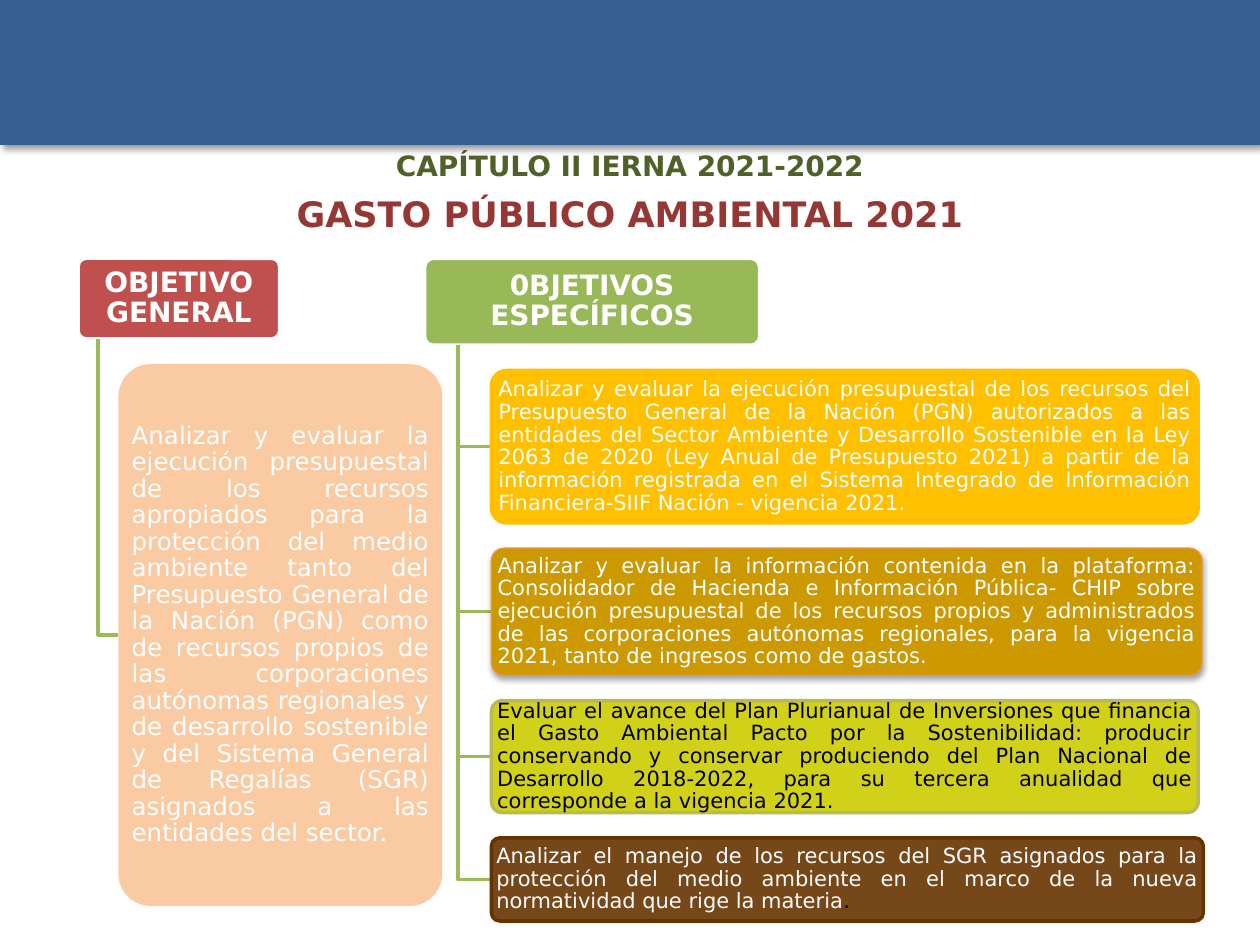
"""Slide with the general and specific objectives of environmental public spending."""
from dataclasses import dataclass
from typing import Optional

from lxml.etree import SubElement
from pptx import Presentation
from pptx.dml.color import RGBColor
from pptx.enum.shapes import MSO_SHAPE as Shape
from pptx.enum.text import MSO_ANCHOR as Anchor, MSO_AUTO_SIZE as AutoSize, PP_ALIGN as Align
from pptx.oxml.ns import qn
from pptx.util import Inches, Pt

FONT = "DejaVu Sans"
WHITE = RGBColor(0xFF, 0xFF, 0xFF)
BLACK = RGBColor(0x00, 0x00, 0x00)
BLUE = RGBColor(0x36, 0x60, 0x92)
RED = RGBColor(0xBF, 0x50, 0x4D)
DARK_RED = RGBColor(0x95, 0x37, 0x34)
DARK_GREEN = RGBColor(0x4F, 0x61, 0x28)
GREEN = RGBColor(0x99, 0xB9, 0x58)
LINK_GREEN = RGBColor(0x9B, 0xBB, 0x59)
ORANGE = RGBColor(0xF7, 0x96, 0x46)
ORANGE_EDGE = RGBColor(0xF5, 0x91, 0x3F)
AMBER = RGBColor(0xFF, 0xC0, 0x00)
OCHRE = RGBColor(0xCC, 0x99, 0x00)
LIME = RGBColor(0xCC, 0xCC, 0x00)
OLIVE = RGBColor(0xBA, 0xBA, 0x55)
BROWN = RGBColor(0x66, 0x33, 0x00)


@dataclass(frozen=True)
class Shadow:
    alpha: int
    blur: float
    dist: float
    angle: int


@dataclass(frozen=True)
class Card:
    text: str
    left: float
    top: float
    width: float
    height: float
    fill: RGBColor
    line: Optional[RGBColor] = WHITE
    weight: float = 2
    opacity: int = 100
    color: RGBColor = WHITE
    size: int = 12
    bold: bool = False
    align: Align = Align.JUSTIFY
    inset: float = 0.02
    shadow: Optional[Shadow] = None
    ending: str = ""


HEADING = dict(size=16, bold=True, align=Align.CENTER, inset=0.03)

GENERAL = Card("OBJETIVO GENERAL", 0.62, 2.05, 1.6, 0.64, RED, **HEADING)
GENERAL_ITEMS = [
    Card("Analizar y evaluar la ejecución presupuestal de los recursos apropiados para la "
         "protección del medio ambiente tanto del Presupuesto General de la Nación (PGN) como de "
         "recursos propios de las corporaciones autónomas regionales y de desarrollo sostenible y "
         "del Sistema General de Regalías (SGR) asignados a las entidades del sector.",
         0.94, 2.89, 2.57, 4.3, ORANGE, line=None, opacity=50, size=14, inset=0.03),
]
SPECIFIC = Card("0BJETIVOS ESPECÍFICOS", 3.37, 2.05, 2.66, 0.69, GREEN, **HEADING)
SPECIFIC_ITEMS = [
    Card("Analizar y evaluar la ejecución presupuestal de los recursos del Presupuesto General de "
         "la Nación (PGN) autorizados a las entidades del Sector Ambiente y Desarrollo Sostenible "
         "en la Ley 2063 de 2020 (Ley Anual de Presupuesto 2021) a partir de la información "
         "registrada en el Sistema Integrado de Información Financiera-SIIF Nación - vigencia 2021.",
         3.9, 2.94, 5.61, 1.21, AMBER, line=AMBER),
    Card("Analizar y evaluar la información contenida en la plataforma: Consolidador de Hacienda e "
         "Información Pública- CHIP sobre ejecución presupuestal de los recursos propios y "
         "administrados de las corporaciones autónomas regionales, para la vigencia 2021, tanto de "
         "ingresos como de gastos.",
         3.9, 4.35, 5.64, 1.01, OCHRE, line=ORANGE_EDGE, weight=0.75,
         shadow=Shadow(35, 3.1, 1.8, 90)),
    Card("Evaluar el avance del Plan Plurianual de Inversiones que financia el Gasto Ambiental "
         "Pacto por la Sostenibilidad: producir conservando y conservar produciendo del Plan "
         "Nacional de Desarrollo 2018-2022, para su tercera anualidad que corresponde a la "
         "vigencia 2021.",
         3.9, 5.56, 5.61, 0.89, LIME, line=OLIVE, opacity=90, color=BLACK),
    Card("Analizar el manejo de los recursos del SGR asignados para la protección del medio "
         "ambiente en el marco de la nueva normatividad que rige la materia",
         3.9, 6.65, 5.65, 0.66, BROWN, line=BROWN, opacity=90, ending="."),
]


def add_text(p, text: str, *, size: int, color: RGBColor, bold: bool = False) -> None:
    r = p.add_run()
    r.text = text
    r.font.name, r.font.size, r.font.bold = FONT, Pt(size), bold
    r.font.color.rgb = color


def set_shadow(sp, shadow: Optional[Shadow]) -> None:
    sp.shadow.inherit = False
    if shadow:
        effects = sp._element.spPr.find(qn("a:effectLst"))
        outer = SubElement(effects, qn("a:outerShdw"), blurRad=str(Pt(shadow.blur)),
                           dist=str(Pt(shadow.dist)), dir=str(shadow.angle * 60000),
                           algn="tl", rotWithShape="0")
        color = SubElement(outer, qn("a:srgbClr"), val=str(BLACK))
        SubElement(color, qn("a:alpha"), val=str(shadow.alpha * 1000))


def set_fill(sp, color: RGBColor, opacity: int = 100) -> None:
    sp.fill.solid()
    sp.fill.fore_color.rgb = color
    if opacity < 100:
        srgb = sp._element.spPr.find(qn("a:solidFill")).find(qn("a:srgbClr"))
        SubElement(srgb, qn("a:alpha"), val=str(opacity * 1000))


def set_line(sp, color: Optional[RGBColor], weight: float = 2) -> None:
    if color is None:
        sp.line.fill.background()
    else:
        sp.line.color.rgb = color
        sp.line.width = Pt(weight)


def add_card(s, card: Card) -> None:
    sp = s.shapes.add_shape(Shape.ROUNDED_RECTANGLE, Inches(card.left), Inches(card.top),
                            Inches(card.width), Inches(card.height))
    sp.adjustments[0] = 0.1
    set_fill(sp, card.fill, card.opacity)
    set_line(sp, card.line, card.weight)
    set_shadow(sp, card.shadow)
    tf = sp.text_frame
    tf.word_wrap, tf.vertical_anchor = True, Anchor.MIDDLE
    tf.margin_left = tf.margin_right = Inches(card.inset)
    tf.margin_top = tf.margin_bottom = Inches(0.02)
    p = tf.paragraphs[0]
    p.alignment, p.line_spacing = card.align, 0.9
    add_text(p, card.text, size=card.size, color=card.color, bold=card.bold)
    if card.ending:
        add_text(p, card.ending, size=card.size, color=BLACK)


def add_elbow(s, parent: Card, child: Card) -> None:
    x = Inches(parent.left + parent.width / 10)
    y = Inches(child.top + child.height / 2)
    builder = s.shapes.build_freeform(x, Inches(parent.top + parent.height))
    builder.add_line_segments([(x, y), (Inches(child.left), y)], close=False)
    sp = builder.convert_to_shape()
    sp.fill.background()
    set_line(sp, LINK_GREEN)
    set_shadow(sp, None)


def add_branch(s, parent: Card, children: list[Card]) -> None:
    add_card(s, parent)
    for child in children:
        add_elbow(s, parent, child)
        add_card(s, child)


def add_banner(s) -> None:
    sp = s.shapes.add_shape(Shape.RECTANGLE, 0, 0, Inches(10), Inches(1.15))
    set_fill(sp, BLUE)
    set_line(sp, None)
    set_shadow(sp, Shadow(40, 4, 3, 45))


def add_title(s) -> None:
    title = s.shapes.title
    title.left, title.top = Inches(1.65), Inches(1.13)
    title.width, title.height = Inches(6.7), Inches(0.79)
    tf = title.text_frame
    tf.word_wrap, tf.auto_size, tf.vertical_anchor = True, AutoSize.NONE, Anchor.TOP
    chapter, subject = tf.paragraphs[0], tf.add_paragraph()
    chapter.alignment = subject.alignment = Align.CENTER
    subject.space_before = Pt(6)
    add_text(chapter, "CAPÍTULO II IERNA 2021-2022", size=16, color=DARK_GREEN, bold=True)
    add_text(subject, "GASTO PÚBLICO AMBIENTAL 2021", size=20, color=DARK_RED, bold=True)


def main() -> None:
    prs = Presentation()
    prs.slide_width, prs.slide_height = Inches(10), Inches(7.5)
    s = prs.slides.add_slide(prs.slide_layouts[5])
    add_banner(s)
    add_title(s)
    add_branch(s, GENERAL, GENERAL_ITEMS)
    add_branch(s, SPECIFIC, SPECIFIC_ITEMS)
    prs.save("out.pptx")


if __name__ == "__main__":
    main()
